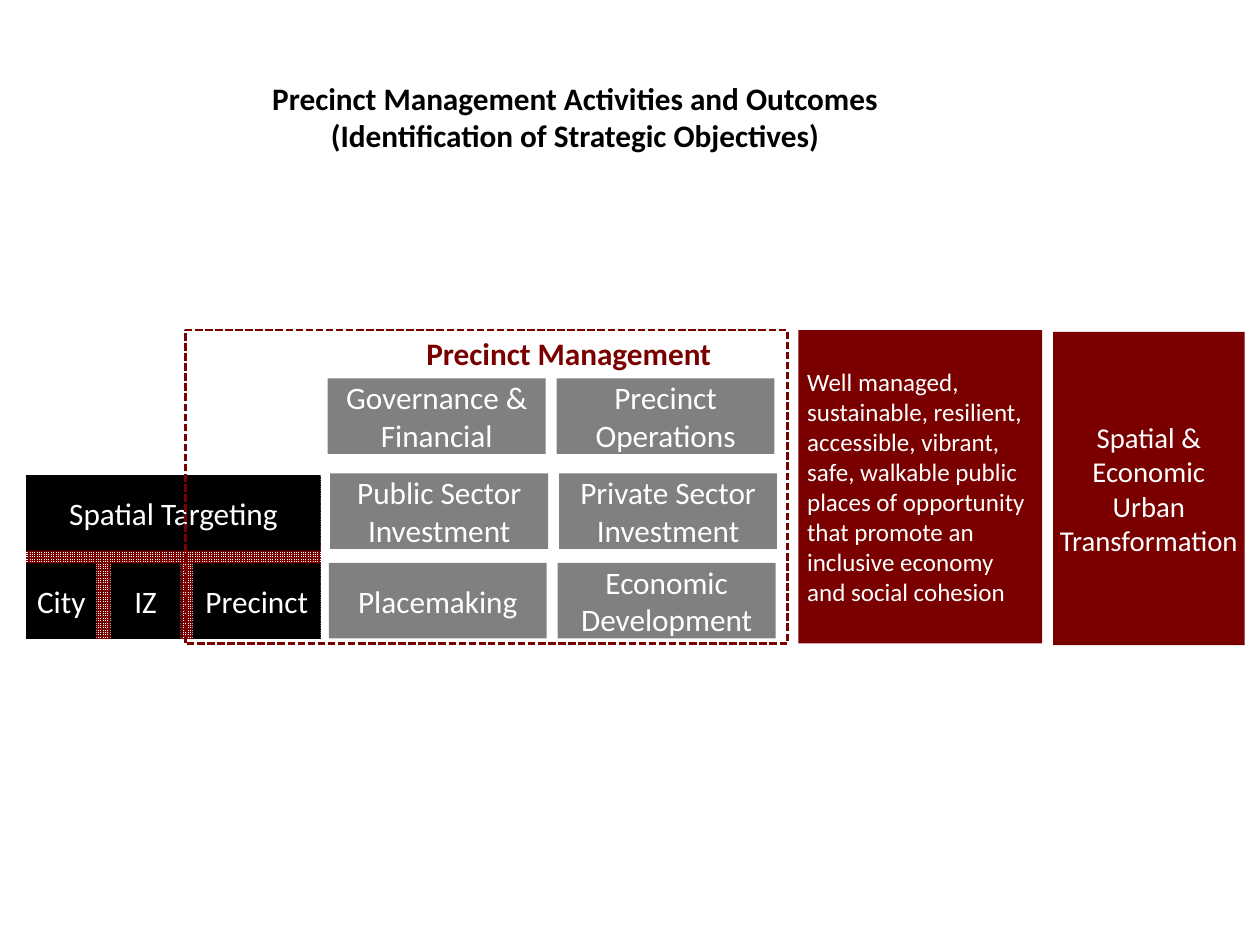
from dataclasses import dataclass

from pptx import Presentation
from pptx.dml.color import RGBColor
from pptx.enum.dml import MSO_LINE, MSO_PATTERN
from pptx.enum.shapes import MSO_SHAPE
from pptx.enum.text import MSO_ANCHOR, MSO_AUTO_SIZE, PP_ALIGN
from pptx.shapes.autoshape import Shape
from pptx.slide import Slide
from pptx.util import Cm, Pt

RECTANGLE = MSO_SHAPE.RECTANGLE
SMALL_GRID = MSO_PATTERN.SMALL_GRID
SHORT_DASH = MSO_LINE.SQUARE_DOT
MIDDLE = MSO_ANCHOR.MIDDLE
FIT_SHAPE = MSO_AUTO_SIZE.SHAPE_TO_FIT_TEXT
LEFT, CENTER = PP_ALIGN.LEFT, PP_ALIGN.CENTER

MAROON = RGBColor(0x7A, 0x00, 0x00)
GREY = RGBColor(0x80, 0x80, 0x80)
BLACK = RGBColor(0x00, 0x00, 0x00)
WHITE = RGBColor(0xFF, 0xFF, 0xFF)

FONT = "Calibri"
BOX_HEIGHT = 2.13
ACTIVITY_WIDTH = 6.15
ACTIVITY_PITCH = 6.46
PANEL_TOP, PANEL_HEIGHT = 9.32, 8.84
TARGET_LEFT, TARGET_TOP, TARGET_WIDTH = 0.74, 13.41, 8.31
LEVEL_TOP = 15.9


@dataclass(frozen=True)
class Area:
    """A place on the page, in centimetres."""
    left: float
    top: float
    width: float
    height: float = BOX_HEIGHT

    def lengths(self) -> tuple[Cm, Cm, Cm, Cm]:
        return Cm(self.left), Cm(self.top), Cm(self.width), Cm(self.height)


@dataclass(frozen=True)
class Block:
    """A filled box with its wording."""
    area: Area
    text: str
    color: RGBColor
    size: int = 25
    align: PP_ALIGN = CENTER
    side_margin: float = 0.25


@dataclass(frozen=True)
class ActivityRow:
    left: float
    top: float
    labels: tuple[str, str]


def write(shape: Shape, text: str, size: int, color: RGBColor,
          align: PP_ALIGN = CENTER, bold: bool = False) -> None:
    frame = shape.text_frame
    frame.text = text
    for paragraph in frame.paragraphs:
        paragraph.alignment = align
        for span in paragraph.runs:
            span.font.name = FONT
            span.font.size = Pt(size)
            span.font.bold = bold
            span.font.color.rgb = color


def add_rectangle(page: Slide, area: Area) -> Shape:
    box = page.shapes.add_shape(RECTANGLE, *area.lengths())
    box.shadow.inherit = False
    box.line.fill.background()
    return box


def add_block(page: Slide, block: Block) -> None:
    box = add_rectangle(page, block.area)
    box.fill.solid()
    box.fill.fore_color.rgb = block.color
    frame = box.text_frame
    frame.word_wrap = True
    frame.vertical_anchor = MIDDLE
    frame.margin_left = frame.margin_right = Cm(block.side_margin)
    write(box, block.text, block.size, WHITE, block.align)


def add_heading(page: Slide, area: Area, text: str, color: RGBColor) -> None:
    box = page.shapes.add_textbox(*area.lengths())
    box.text_frame.word_wrap = False
    box.text_frame.auto_size = FIT_SHAPE
    write(box, text, 25, color, bold=True)


def add_grid_backing(page: Slide, area: Area) -> None:
    fill = add_rectangle(page, area).fill
    fill.patterned()
    fill.pattern = SMALL_GRID
    fill.fore_color.rgb = MAROON
    fill.back_color.rgb = WHITE


def add_dashed_frame(page: Slide, area: Area) -> None:
    box = add_rectangle(page, area)
    box.fill.background()
    box.line.color.rgb = MAROON
    box.line.width = Pt(2)
    box.line.dash_style = SHORT_DASH


ACTIVITIES = (
    ActivityRow(9.25, 10.68, ("Governance & Financial", "Precinct Operations")),
    ActivityRow(9.32, 13.36, ("Public Sector Investment", "Private Sector Investment")),
    ActivityRow(9.28, 15.89, ("Placemaking", "Economic Development")),
)

SPATIAL_TARGETING = Block(
    Area(TARGET_LEFT, TARGET_TOP, TARGET_WIDTH), "Spatial Targeting", BLACK)

LEVELS = (
    Block(Area(TARGET_LEFT, LEVEL_TOP, 1.98), "City", BLACK),
    Block(Area(3.12, LEVEL_TOP, 1.98), "IZ", BLACK),
    Block(Area(5.44, LEVEL_TOP, 3.61), "Precinct", BLACK),
)

OUTCOMES = (
    Block(Area(22.53, PANEL_TOP, 6.88, PANEL_HEIGHT),
          "Well managed, sustainable, resilient, accessible, vibrant, safe, "
          "walkable public places of opportunity that promote an inclusive "
          "economy and social cohesion", MAROON, 20, LEFT),
    Block(Area(29.72, 9.37, 5.41, PANEL_HEIGHT),
          "Spatial & Economic Urban Transformation", MAROON, 23, CENTER, 0.1),
)


def main() -> None:
    deck = Presentation()
    deck.slide_width, deck.slide_height = Cm(35.56), Cm(26.67)
    page = deck.slides.add_slide(deck.slide_layouts[6])

    # Spatial targeting on its grid backing
    add_grid_backing(page, Area(TARGET_LEFT, TARGET_TOP, TARGET_WIDTH, 4.62))
    add_block(page, SPATIAL_TARGETING)

    # Precinct management activities
    for row in ACTIVITIES:
        for column, label in enumerate(row.labels):
            left = row.left + column * ACTIVITY_PITCH
            add_block(page, Block(Area(left, row.top, ACTIVITY_WIDTH), label, GREY))
    add_dashed_frame(page, Area(5.23, PANEL_TOP, 16.99, PANEL_HEIGHT))

    # Levels of targeting and outcomes
    for block in LEVELS + OUTCOMES:
        add_block(page, block)

    # Headings
    add_heading(page, Area(11.73, PANEL_TOP, 8.64, 1.32), "Precinct Management", MAROON)
    add_heading(page, Area(7.32, 2.11, 17.81, 2.39),
                "Precinct Management Activities and Outcomes\n"
                "(Identification of Strategic Objectives)", BLACK)

    deck.save("out.pptx")


if __name__ == "__main__":
    main()
